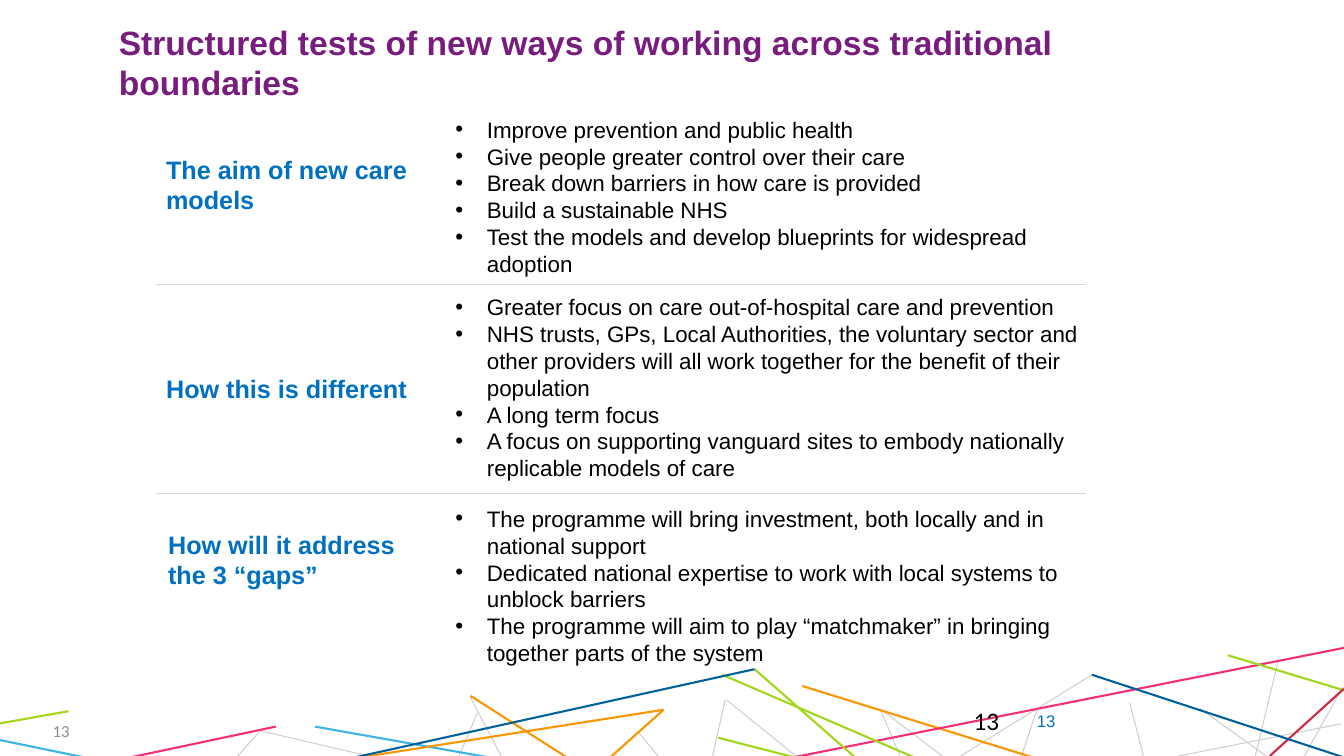
"""Build a slide on the aims, differences and gaps of new care models."""
import pptx
import pptx.dml.color
import pptx.enum.shapes
import pptx.enum.text
import pptx.oxml.xmlchemy
import pptx.util

Pt = pptx.util.Pt
ANCHOR = pptx.enum.text.MSO_ANCHOR
ALIGN = pptx.enum.text.PP_ALIGN
RGB = pptx.dml.color.RGBColor.from_string
new_element = pptx.oxml.xmlchemy.OxmlElement

presentation = pptx.Presentation()
presentation.slide_width, presentation.slide_height = Pt(960), Pt(540)
slide = presentation.slides.add_slide(presentation.slide_layouts[6])


def add_line(start_x, start_y, end_x, end_y, color, width):
    line = slide.shapes.add_connector(
        pptx.enum.shapes.MSO_CONNECTOR.STRAIGHT,
        Pt(start_x), Pt(start_y), Pt(end_x), Pt(end_y))
    line.line.color.rgb = RGB(color)
    line.line.width = Pt(width)
    line._element.spPr.append(new_element("a:effectLst"))


def add_text(lines, left, top, width, height, size, color, bold=False,
             font="Arial", anchor=ANCHOR.TOP, align=ALIGN.LEFT, bullets=False):
    box = slide.shapes.add_textbox(Pt(left), Pt(top), Pt(width), Pt(height))
    frame = box.text_frame
    frame.word_wrap = True
    frame.vertical_anchor = anchor
    if bullets:
        frame.auto_size = pptx.enum.text.MSO_AUTO_SIZE.SHAPE_TO_FIT_TEXT
    frame.text = "\n".join(lines)
    for paragraph in frame.paragraphs:
        paragraph.alignment = align
        if bullets:
            properties = paragraph._p.get_or_add_pPr()
            properties.set("marL", str(Pt(22.5)))
            properties.set("indent", str(-Pt(22.5)))
            bullet_font = new_element("a:buFont")
            bullet_font.set("typeface", "Arial")
            bullet = new_element("a:buChar")
            bullet.set("char", "•")
            properties.extend([bullet_font, bullet])
        for run in paragraph.runs:
            run.font.name = font
            run.font.size = Pt(size)
            run.font.bold = bold
            run.font.color.rgb = RGB(color)


footer_lines = [
    ("D0CFCF", 0.75, [
        (913, 472, 896, 543), (631, 508, 698, 559), (629, 507, 653, 564),
        (741, 506, 726, 551), (780, 482, 670, 550), (958, 517, 842, 540),
        (959, 491, 930, 543), (857, 506, 931, 559), (185, 523, 151, 561),
        (186, 522, 315, 552), (341, 509, 318, 564), (336, 498, 368, 559),
        (456, 523, 485, 558), (519, 500, 597, 563), (518, 500, 502, 571),
        (807, 502, 821, 557)]),
    ("3CB4E5", 1.5, [(-8, 527, 148, 559), (225, 519, 451, 559)]),
    ("F99600", 1.5, [
        (336, 497, 441, 564), (474, 507, 149, 558),
        (474, 507, 418, 557), (573, 490, 796, 559)]),
    ("F32F79", 1.5, [(197, 519, 60, 548), (979, 459, 476, 559)]),
    ("A2D61B", 1.5, [
        (49, 508, -13, 519), (539, 478, 629, 557), (513, 527, 630, 557),
        (973, 497, 877, 468), (516, 482, 660, 544)]),
    ("CE2843", 1.5, [(960, 492, 907, 540)]),
    ("006298", 1.5, [(780, 482, 963, 542), (539, 478, 181, 557)]),
]
for color, width, segments in footer_lines:
    for segment in segments:
        add_line(*segment, color, width)

add_text(["13"], 11.5, 507.6, 45.4, 28.8, 12, "8C8C8C", font="Calibri",
         anchor=ANCHOR.MIDDLE, align=ALIGN.RIGHT)
add_text(["13"], 688.3, 500.4, 223.9, 28.8, 18, "000000", font="Calibri")
add_text(["13"], 593.3, 500.4, 167.8, 28.8, 12, "0072C6",
         anchor=ANCHOR.MIDDLE, align=ALIGN.RIGHT)

add_text(["Structured tests of new ways of working across traditional boundaries"],
         77.8, 12.2, 720, 50.4, 24, "781D7D", bold=True)

sections = [
    ("The aim of new care models", 111.6, 93.6, 79.2, 123.8, [
        "Improve prevention and public health",
        "Give people greater control over their care",
        "Break down barriers in how care is provided",
        "Build a sustainable NHS",
        "Test the models and develop blueprints for widespread adoption"]),
    ("How this is different", 111.6, 239, 205.9, 143.3, [
        "Greater focus on care out-of-hospital care and prevention",
        "NHS trusts, GPs, Local Authorities, the voluntary sector and other "
        "providers will all work together for the benefit of their population",
        "A long term focus",
        "A focus on supporting vanguard sites to embody nationally replicable "
        "models of care"]),
    ("How will it address the 3 “gaps”", 113, 361.4, 357.1, 128.2, [
        "The programme will bring investment, both locally and in national support",
        "Dedicated national expertise to work with local systems to unblock barriers",
        "The programme will aim to play “matchmaker” in bringing together parts "
        "of the system"]),
]
points_left = 318.2
for label, label_left, label_top, points_top, points_height, points in sections:
    add_text([label], label_left, label_top, points_left - label_left, 76.3, 18,
             "0070C0", bold=True, anchor=ANCHOR.MIDDLE)
    add_text(points, points_left, points_top, 470.9, points_height, 16,
             "000000", bullets=True)

for divider_top in (203, 352.1):
    add_line(111.6, divider_top, 775.4, divider_top, "D9D9D9", 0.25)

presentation.save("out.pptx")
